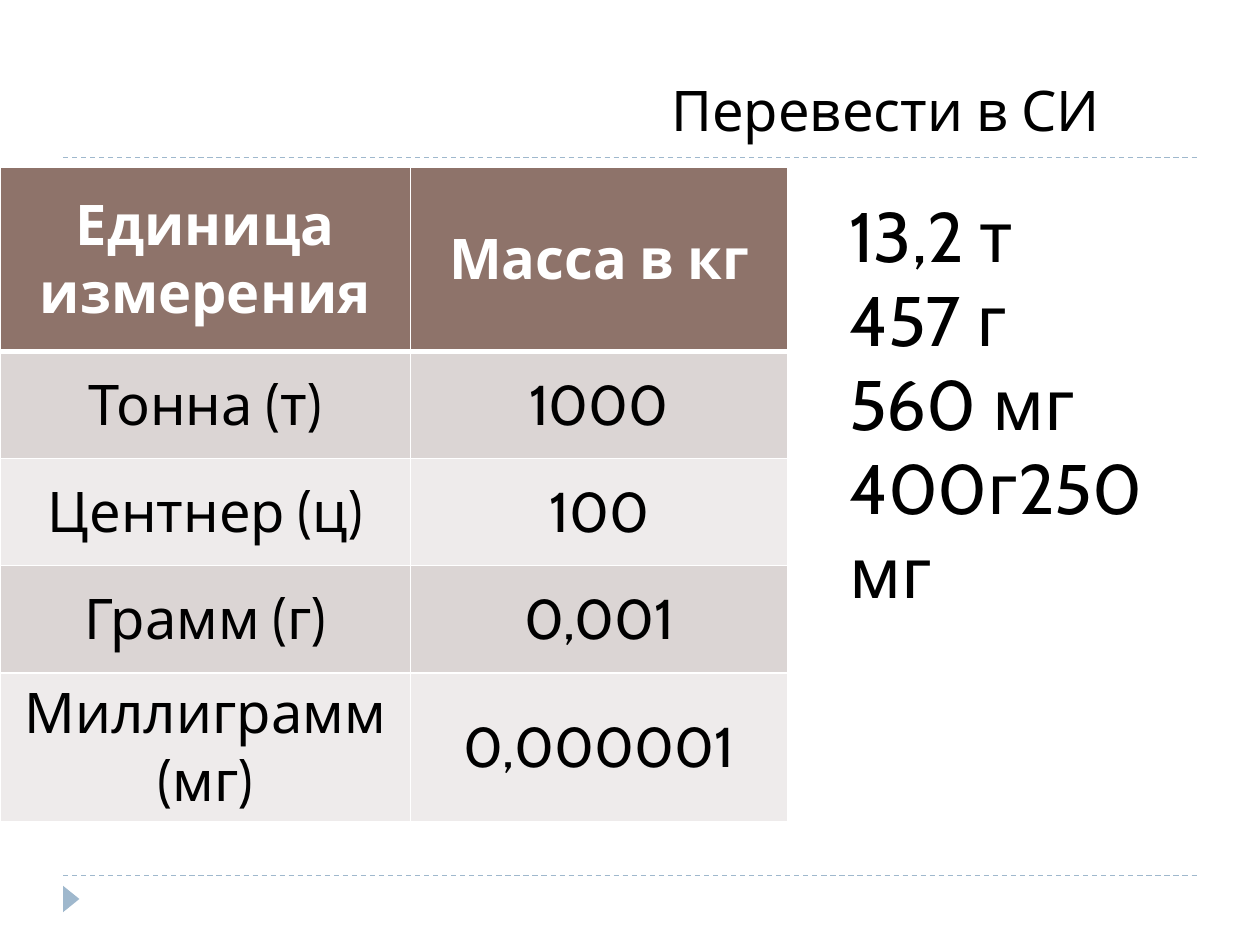
"""Builds the slide on converting units of mass to SI."""
from dataclasses import dataclass

from lxml import etree
from pptx import Presentation
from pptx.dml.color import RGBColor
from pptx.enum.dml import MSO_LINE
from pptx.enum.shapes import MSO_CONNECTOR, MSO_SHAPE
from pptx.enum.text import MSO_ANCHOR, MSO_AUTO_SIZE, PP_ALIGN
from pptx.oxml.ns import qn
from pptx.util import Emu, Pt

LEFT, CENTER, RIGHT = PP_ALIGN.LEFT, PP_ALIGN.CENTER, PP_ALIGN.RIGHT
TOP, MIDDLE = MSO_ANCHOR.TOP, MSO_ANCHOR.MIDDLE
DASH = MSO_LINE.DASH
STRAIGHT = MSO_CONNECTOR.STRAIGHT
TRIANGLE = MSO_SHAPE.ISOSCELES_TRIANGLE
NO_AUTOFIT = MSO_AUTO_SIZE.NONE
EMU_PER_PX = 9144
TITLE_ONLY = 5


@dataclass(frozen=True)
class Theme:
    font: str = "Cabin"
    text: str = "000000"
    white: str = "FFFFFF"
    accent: str = "9FB8CD"
    header: str = "8E736A"
    bands: tuple[str, str] = ("DBD5D4", "EEEBEB")
    body_size: int = 32
    task_size: int = 40
    rule_width: float = 0.75
    grid_width: int = 1
    header_rule_width: int = 3


@dataclass(frozen=True)
class Box:
    left: int
    top: int
    width: int
    height: int

    def emu(self) -> tuple[Emu, ...]:
        return tuple(px(n) for n in (self.left, self.top, self.width, self.height))


@dataclass(frozen=True)
class UnitRow:
    unit: str
    kilograms: str


THEME = Theme()
TITLE = "Перевести в СИ"
TITLE_BOX = Box(172, 55, 711, 64)
TASKS = ("13,2 т", "457 г", "560 мг", "400г250 мг")
TASK_BOX = Box(664, 148, 297, 279)
UNIT_ROWS = (
    UnitRow("Единица измерения", "Масса в кг"),
    UnitRow("Тонна (т)", "1000"),
    UnitRow("Центнер (ц)", "100"),
    UnitRow("Грамм (г)", "0,001"),
    UnitRow("Миллиграмм (мг)", "0,000001"),
)
COLUMN_WIDTHS = (326, 299)
HEADER_HEIGHT, ROW_HEIGHT = 146, 85
UNIT_BOX = Box(0, 133, sum(COLUMN_WIDTHS), HEADER_HEIGHT + ROW_HEIGHT * 4)
RULE_LEFT, RULE_RIGHT = 50, 950
RULE_TOPS = (695, 125)
MARKER_BOX = Box(46, 707, 21, 13)


def px(length: int) -> Emu:
    return Emu(length * EMU_PER_PX)


def rgb(color: str) -> RGBColor:
    return RGBColor.from_string(color)


def format_text(frame, size: int, align, color: str = THEME.text, bold: bool = False) -> None:
    for paragraph in frame.paragraphs:
        paragraph.alignment = align
        for run in paragraph.runs:
            run.font.name = THEME.font
            run.font.size = Pt(size)
            run.font.bold = bold
            run.font.color.rgb = rgb(color)


def add_rule(slide, top: int) -> None:
    rule = slide.shapes.add_connector(
        STRAIGHT, px(RULE_LEFT), px(top), px(RULE_RIGHT), px(top))
    rule.line.color.rgb = rgb(THEME.accent)
    rule.line.width = Pt(THEME.rule_width)
    rule.line.dash_style = DASH
    etree.SubElement(rule._element.spPr, qn("a:effectLst"))


def add_marker(slide) -> None:
    marker = slide.shapes.add_shape(TRIANGLE, *MARKER_BOX.emu())
    marker.rotation = 90
    marker.shadow.inherit = False
    marker.fill.solid()
    marker.fill.fore_color.rgb = rgb(THEME.accent)
    marker.line.fill.background()


def set_borders(cell, top: int, bottom: int) -> None:
    widths = {"lnL": THEME.grid_width, "lnR": THEME.grid_width, "lnT": top, "lnB": bottom}
    properties = cell._tc.get_or_add_tcPr()
    for side, width in widths.items():
        border = etree.SubElement(properties, qn(f"a:{side}"), w=str(Pt(width)))
        fill = etree.SubElement(border, qn("a:solidFill"))
        etree.SubElement(fill, qn("a:srgbClr"), val=THEME.white)


def add_units(slide) -> None:
    units = slide.shapes.add_table(
        len(UNIT_ROWS), len(COLUMN_WIDTHS), *UNIT_BOX.emu()).table
    for column, width in zip(units.columns, COLUMN_WIDTHS):
        column.width = px(width)
    for index, entry in enumerate(UNIT_ROWS):
        is_header = index == 0
        units.rows[index].height = px(HEADER_HEIGHT if is_header else ROW_HEIGHT)
        background = THEME.header if is_header else THEME.bands[(index - 1) % 2]
        color = THEME.white if is_header else THEME.text
        top = THEME.header_rule_width if index == 1 else THEME.grid_width
        bottom = THEME.header_rule_width if is_header else THEME.grid_width
        for cell, words in zip(units.rows[index].cells, (entry.unit, entry.kilograms)):
            cell.text_frame.text = words
            cell.vertical_anchor = MIDDLE
            format_text(cell.text_frame, THEME.body_size, CENTER, color, is_header)
            set_borders(cell, top, bottom)
            cell.fill.solid()
            cell.fill.fore_color.rgb = rgb(background)


def set_title(slide) -> None:
    title = slide.shapes.title
    title.left, title.top, title.width, title.height = TITLE_BOX.emu()
    frame = title.text_frame
    frame.text = TITLE
    frame.word_wrap = True
    frame.auto_size = NO_AUTOFIT
    frame.vertical_anchor = TOP
    format_text(frame, THEME.body_size, RIGHT)


def add_tasks(slide) -> None:
    frame = slide.shapes.add_textbox(*TASK_BOX.emu()).text_frame
    frame.word_wrap = True
    frame.text = "\n".join(TASKS)
    format_text(frame, THEME.task_size, LEFT)


def main() -> None:
    deck = Presentation()
    deck.slide_width, deck.slide_height = px(1000), px(750)
    slide = deck.slides.add_slide(deck.slide_layouts[TITLE_ONLY])
    for top in RULE_TOPS:
        add_rule(slide, top)
    add_marker(slide)
    add_units(slide)
    set_title(slide)
    add_tasks(slide)
    deck.save("out.pptx")


if __name__ == "__main__":
    main()
